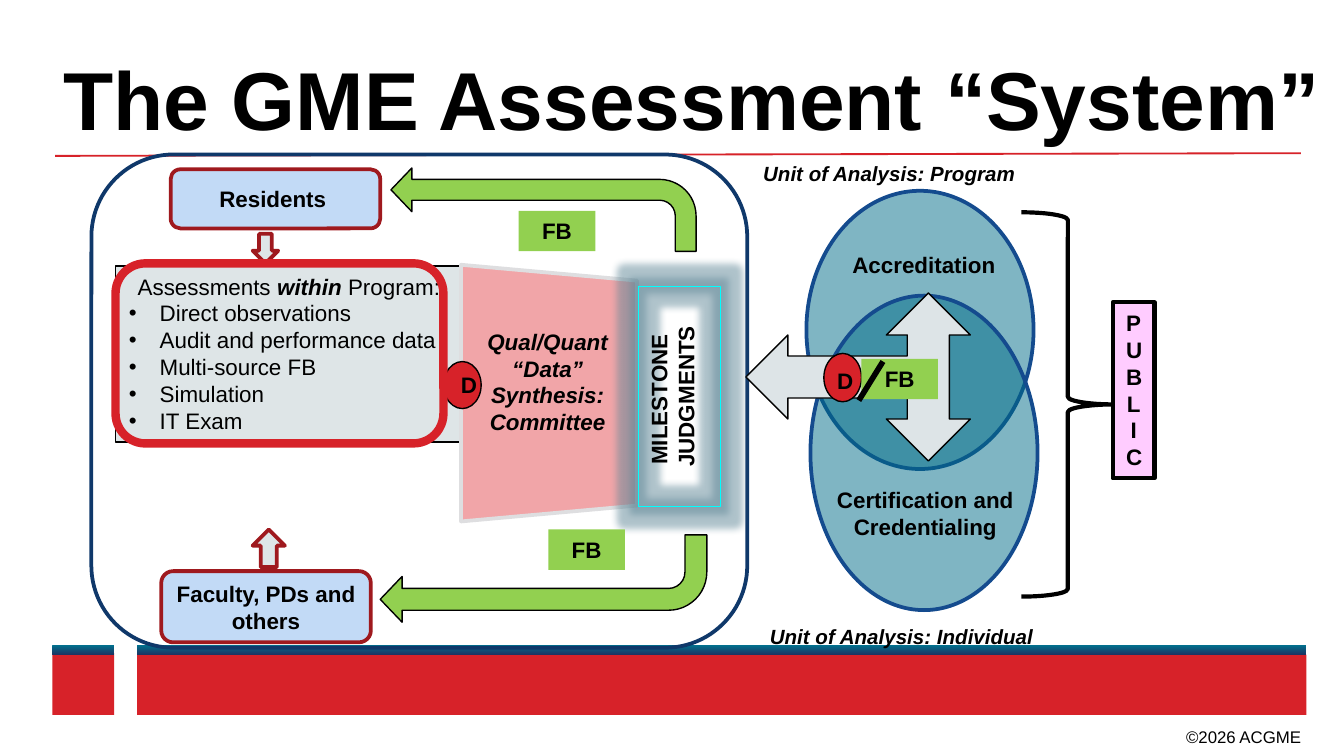
from dataclasses import dataclass

from lxml.etree import SubElement
from pptx import Presentation
from pptx.dml.color import RGBColor
from pptx.enum.shapes import MSO_CONNECTOR, MSO_SHAPE as Kind
from pptx.enum.text import MSO_ANCHOR as Anchor, PP_ALIGN as Align
from pptx.oxml.ns import qn
from pptx.util import Inches, Pt


@dataclass(frozen=True)
class Theme:
    font: str = "Arial"
    title: int = 44
    body: int = 12
    unit: int = 11
    footer: int = 9
    black: str = "000000"
    red: str = "D72229"
    dark_red: str = "9F191E"
    teal: str = "00728F"
    navy: str = "1C3563"
    frame: str = "0F386A"
    gray: str = "DEE5E7"
    arrow: str = "DDE4E7"
    pink: str = "F1A5A8"
    pale: str = "DEDEE0"
    blue: str = "C2DAF6"
    circle: str = "006C88"
    circle_edge: str = "144B8E"
    cyan: str = "00FFFF"
    glow: str = "5F8797"
    green: str = "92D050"
    lilac: str = "FFCCFF"


theme = Theme()
deck = Presentation()
deck.slide_width, deck.slide_height = Inches(10), Inches(10 * 9 / 16)
slide = deck.slides.add_slide(deck.slide_layouts[5])
shapes = slide.shapes


def draw(kind, box, fill=None, line=None, width=0.75, adj=(), flip="", turn=0):
    part = shapes.add_shape(kind, *map(Inches, box))
    part.shadow.inherit = False
    part.rotation = turn
    for index, value in enumerate(adj):
        part.adjustments[index] = value
    for axis in flip:
        part._element.spPr.xfrm.set("flip" + axis, "1")
    if fill:
        part.fill.solid()
        part.fill.fore_color.rgb = RGBColor.from_string(fill)
    else:
        part.fill.background()
    if line:
        part.line.color.rgb = RGBColor.from_string(line)
        part.line.width = Pt(width)
    else:
        part.line.fill.background()
    return part


def write(target, lines, size=theme.body, align=Align.CENTER, anchor=Anchor.TOP,
          wrap=True, bold=True, italic=False):
    if isinstance(target, tuple):
        target = shapes.add_textbox(*map(Inches, target))
    frame = target.text_frame
    frame.word_wrap, frame.vertical_anchor = wrap, anchor
    frame.text = "\n".join(lines)
    look = {"name": theme.font, "size": Pt(size), "bold": bold, "italic": italic}
    for paragraph in frame.paragraphs:
        paragraph.alignment = align
        for run in paragraph.runs:
            for key, value in look.items():
                setattr(run.font, key, value)
            run.font.color.rgb = RGBColor.from_string(theme.black)
    return frame


title = shapes.title
title.left, title.top, title.width, title.height = map(Inches, (0.37, 0.2, 9.63, 0.94))
title_frame = write(title, ["The GME Assessment “System”"], theme.title, Align.LEFT, Anchor.BOTTOM)
title_frame.margin_right = 0

draw(Kind.RECTANGLE, (1.02, 4.87, 8.7, 0.45), theme.red)
draw(Kind.RECTANGLE, (0.39, 4.86, 0.46, 0.46), theme.red)
for left, width in ((1.02, 8.7), (0.39, 0.46)):
    strip = draw(Kind.RECTANGLE, (left, 4.8, width, 0.07))
    strip.fill.gradient()
    strip.fill.gradient_angle = 270
    for stop, color, place in zip(strip.fill.gradient_stops, (theme.teal, theme.navy), (0, 1)):
        stop.color.rgb = RGBColor.from_string(color)
        stop.position = place
write((8.71, 5.36, 1.07, 0.25), ["©2026 ACGME"], theme.footer, Align.RIGHT, wrap=False, bold=False)

assessments = draw(Kind.RECTANGLE, (0.86, 1.98, 2.58, 1.31), theme.gray, theme.black)
methods = write(assessments, [
    "Assessments ", "Direct observations", "Audit and performance data",
    "Multi-source FB", "Simulation", "IT Exam"], align=Align.LEFT, bold=False)
heading, *items = methods.paragraphs
heading.alignment = Align.CENTER
for words, strong in (("within", True), (" Program:", False)):
    run = heading.add_run()
    run.text = words
    look = {"name": theme.font, "size": Pt(theme.body), "bold": strong, "italic": strong}
    for key, value in look.items():
        setattr(run.font, key, value)
    run.font.color.rgb = RGBColor.from_string(theme.black)
for item in items:
    settings = item._p.get_or_add_pPr()
    settings.set("marL", str(Inches(0.23)))
    settings.set("indent", str(-Inches(0.23)))
    SubElement(settings, qn("a:buFont"), typeface=theme.font)
    SubElement(settings, qn("a:buChar"), char="•")

draw(Kind.TRAPEZOID, (3.13, 2.27, 1.91, 1.31), theme.pink, theme.pale, 2, adj=[0.09], turn=90)
write((3.44, 2.39, 1.27, 0.91), ["Qual/Quant “Data” Synthesis:", "Committee"], italic=True)

for people, panel, label in (
        ("Residents", (1.27, 1.26, 1.56, 0.44), (1.25, 1.33, 1.56, 0.3)),
        ("Faculty, PDs and others", (1.2, 4.25, 1.56, 0.53), (1.2, 4.27, 1.56, 0.5))):
    draw(Kind.ROUNDED_RECTANGLE, panel, theme.blue, theme.dark_red, 2)
    write(label, [people])
draw(Kind.DOWN_ARROW, (1.88, 1.74, 0.19, 0.22), theme.gray, theme.dark_red, 2)
draw(Kind.DOWN_ARROW, (1.88, 3.94, 0.24, 0.28), theme.gray, theme.dark_red, 2, flip="V")
draw(Kind.ROUNDED_RECTANGLE, (0.68, 1.15, 4.88, 3.67), None, theme.frame, 2)

for oval, label, words in (
        ((6, 1.42, 1.69, 2.07), (6.16, 1.82, 1.43, 0.3), "Accreditation"),
        ((6.03, 2.2, 1.69, 2.34), (6.06, 3.57, 1.65, 0.5), "Certification and Credentialing")):
    circle = draw(Kind.OVAL, oval, theme.circle, theme.circle_edge, 2)
    color = circle._element.spPr.find(qn("a:solidFill")).find(qn("a:srgbClr"))
    SubElement(color, qn("a:alpha"), val="50000")
    write(label, [words])
for label, unit in (((5.58, 1.15, 2.53, 0.29), "Program"), ((5.63, 4.59, 2.4, 0.29), "Individual")):
    write(label, ["Unit of Analysis: " + unit], theme.unit, Align.LEFT, italic=True)

draw(Kind.LEFT_RIGHT_UP_ARROW, (5.76, 1.97, 1.25, 1.67), theme.arrow, theme.black, turn=270)

milestone = draw(Kind.RECTANGLE, (4.75, 2.13, 0.61, 1.64), None, theme.cyan)
effects = milestone._element.spPr.find(qn("a:effectLst"))
halo = SubElement(effects, qn("a:glow"), rad=str(Inches(0.11)))
halo_color = SubElement(halo, qn("a:srgbClr"), val=theme.glow)
SubElement(halo_color, qn("a:alpha"), val="50000")
judgments = write(milestone, ["MILESTONE ", "JUDGMENTS"])
judgments._txBody.bodyPr.set("vert", "vert270")

for arrow, flip in (((2.91, 1.25, 2.27, 0.62), "H"), ((2.83, 3.98, 2.43, 0.65), "HV")):
    draw(Kind.BENT_ARROW, arrow, theme.green, theme.black, adj=[0.25, 0.262, 0.25, 0.438], flip=flip)
for dot, label in (
        ((3.3, 2.69, 0.28, 0.35), (3.33, 2.71, 0.28, 0.3)),
        ((6.13, 2.63, 0.28, 0.36), (6.13, 2.68, 0.28, 0.3))):
    draw(Kind.OVAL, dot, theme.red, theme.black)
    write(label, ["D"])
for left, top in ((3.86, 1.57), (4.08, 3.94), (6.41, 2.67)):
    feedback = draw(Kind.RECTANGLE, (left, top, 0.57, 0.3), theme.green)
    write(feedback, ["FB"])

for ends, color, width in (
        ((0.41, 1.16, 9.68, 1.14), theme.red, 1),
        ((6.39, 2.98, 6.57, 2.69), theme.black, 3)):
    rule = shapes.add_connector(MSO_CONNECTOR.STRAIGHT, *map(Inches, ends))
    rule.line.color.rgb = RGBColor.from_string(color)
    rule.line.width = Pt(width)
    SubElement(rule._element.spPr, qn("a:effectLst"))
    if color == theme.red:
        shapes._spTree.insert(2, rule._element)

draw(Kind.RIGHT_BRACE, (7.6, 1.58, 0.69, 2.86), None, theme.black, 2.25, adj=[0.083, 0.5])
public = draw(Kind.RECTANGLE, (8.28, 2.25, 0.31, 1.31), theme.lilac, theme.black, 2.25)
write(public, "PUBLIC")
draw(Kind.ROUNDED_RECTANGLE, (0.86, 1.96, 2.44, 1.34), None, theme.red, 4.5)

deck.save("out.pptx")
